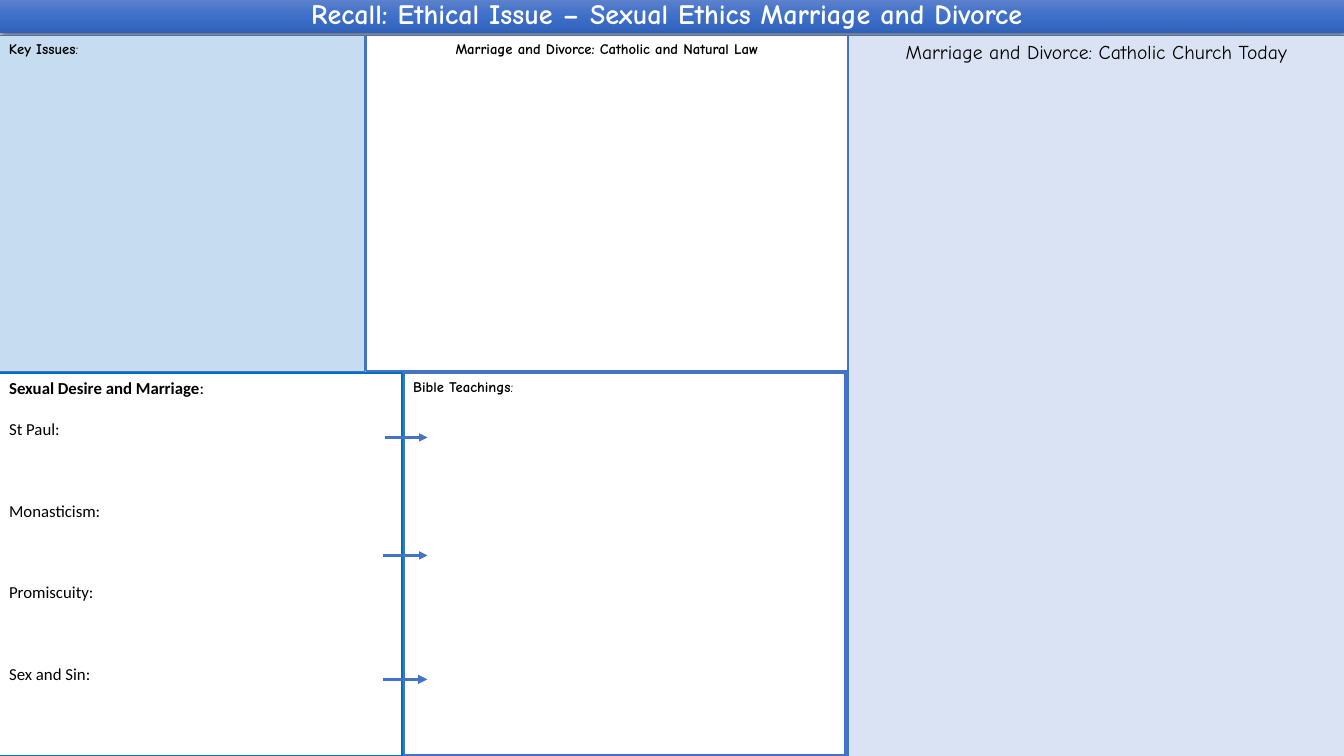
from lxml import etree
from pptx import Presentation
from pptx.dml.color import RGBColor
from pptx.enum.shapes import MSO_CONNECTOR, MSO_SHAPE
from pptx.enum.text import MSO_ANCHOR, MSO_AUTO_SIZE, PP_ALIGN
from pptx.oxml import parse_xml
from pptx.oxml.ns import qn
from pptx.util import Inches, Pt

RECTANGLE = MSO_SHAPE.RECTANGLE
STRAIGHT = MSO_CONNECTOR.STRAIGHT
TOP, MIDDLE = MSO_ANCHOR.TOP, MSO_ANCHOR.MIDDLE
NO_AUTOFIT = MSO_AUTO_SIZE.NONE
LEFT, CENTER = PP_ALIGN.LEFT, PP_ALIGN.CENTER

WHITE = RGBColor(0xFF, 0xFF, 0xFF)
BLACK = RGBColor(0, 0, 0)
BLUE = RGBColor(0x44, 0x72, 0xC4)
DEEP_BLUE = RGBColor(0x00, 0x70, 0xC0)
SKY = RGBColor(0xC6, 0xDC, 0xF0)
LAVENDER = RGBColor(0xDA, 0xE3, 0xF3)
BANNER_STOPS = (
    (0, RGBColor(0x61, 0x83, 0xCB)),
    (50, RGBColor(0x3E, 0x70, 0xCA)),
    (100, RGBColor(0x30, 0x62, 0xBB)),
)
NAMESPACE = 'xmlns:a="http://schemas.openxmlformats.org/drawingml/2006/main"'
COMIC, CALIBRI = "Comic Neue", "Calibri"
TOPICS = ("St Paul:", "Monasticism:", "Promiscuity:", "Sex and Sin:")
ARROWS = ((3.82, 4.34, 2), (3.8, 5.51, 2), (3.8, 6.74, 2.25))


def place(shape, left, top, width, height):
    """Set the position and size of a shape in inches."""
    shape.left, shape.top = Inches(left), Inches(top)
    shape.width, shape.height = Inches(width), Inches(height)


def prepare_frame(shape, anchor=TOP):
    """Make the text of a shape wrap without resizing and return its frame."""
    frame = shape.text_frame
    frame.auto_size = NO_AUTOFIT
    frame.word_wrap = True
    frame.vertical_anchor = anchor
    return frame


def write(paragraph, text, size=10.5, font=COMIC, color=BLACK, bold=False,
          align=LEFT, before=0, spacing=1.0):
    """Add a formatted run to a paragraph."""
    paragraph.alignment = align
    paragraph.space_before = Pt(before)
    paragraph.space_after = Pt(0)
    paragraph.line_spacing = spacing
    run = paragraph.add_run()
    run.text = text
    run.font.name = font
    run.font.size = Pt(size)
    run.font.bold = bold
    run.font.color.rgb = color


def remove_bullet(paragraph):
    """Clear the bullet and hanging indent of a paragraph."""
    properties = paragraph._p.get_or_add_pPr()
    properties.set("marL", "0")
    properties.set("indent", "0")
    etree.SubElement(properties, qn("a:buNone"))


def set_line(shape, color, width):
    """Give a shape or connector a solid line."""
    shape.line.color.rgb = color
    shape.line.width = Pt(width)


def add_panel(slide, box, fill, line_width, heading, **text_format):
    """Add a bordered panel with a heading and return its first paragraph."""
    shape = slide.shapes.add_shape(RECTANGLE, *map(Inches, box))
    shape.shadow.inherit = False
    shape.fill.solid()
    shape.fill.fore_color.rgb = fill
    set_line(shape, BLUE, line_width)
    paragraph = prepare_frame(shape).paragraphs[0]
    write(paragraph, heading, **text_format)
    return paragraph


def fill_banner(title):
    """Turn the title placeholder into the shaded banner."""
    place(title, 0, -0.02, 13.33, 0.35)
    stops = "".join(
        f'<a:gs pos="{position * 1000}"><a:srgbClr val="{color}"/></a:gs>'
        for position, color in BANNER_STOPS
    )
    properties = title._element.spPr
    properties.append(parse_xml(
        f'<a:gradFill {NAMESPACE} rotWithShape="1"><a:gsLst>{stops}</a:gsLst>'
        '<a:lin ang="5400000" scaled="0"/></a:gradFill>'
    ))
    properties.append(parse_xml(
        f'<a:effectLst {NAMESPACE}><a:outerShdw blurRad="{Pt(4.5)}" dist="{Pt(1.5)}" '
        'dir="5400000" algn="ctr" rotWithShape="0"><a:srgbClr val="000000">'
        '<a:alpha val="63000"/></a:srgbClr></a:outerShdw></a:effectLst>'
    ))
    paragraph = prepare_frame(title, MIDDLE).paragraphs[0]
    write(paragraph, "Recall: Ethical Issue – Sexual Ethics Marriage and Divorce ",
          size=20, color=WHITE, bold=True, align=CENTER, spacing=0.9)


def fill_topics(body):
    """Turn the body placeholder into the list of topics."""
    place(body, -0.01, 3.7, 4, 3.8)
    set_line(body, DEEP_BLUE, 1.5)
    frame = prepare_frame(body)
    heading = frame.paragraphs[0]
    write(heading, "Sexual Desire and Marriage", size=12, font=CALIBRI, bold=True)
    write(heading, ":", size=12, font=CALIBRI)
    remove_bullet(heading)
    for index, topic in enumerate(TOPICS):
        paragraph = frame.add_paragraph()
        write(paragraph, topic, size=12, font=CALIBRI, before=44 if index else 14.6)
        remove_bullet(paragraph)


def add_arrow(slide, start, end, level, width):
    """Add a horizontal arrow that points right."""
    arrow = slide.shapes.add_connector(
        STRAIGHT, Inches(start), Inches(level), Inches(end), Inches(level))
    set_line(arrow, BLUE, width)
    etree.SubElement(arrow.line._get_or_add_ln(), qn("a:tailEnd"), type="triangle")
    etree.SubElement(arrow._element.spPr, qn("a:effectLst"))


def main():
    """Build the revision slide and save it."""
    presentation = Presentation()
    presentation.slide_width = Inches(13.33)
    presentation.slide_height = Inches(7.5)
    slide = presentation.slides.add_slide(presentation.slide_layouts[1])
    fill_banner(slide.shapes.title)

    key_issues = add_panel(slide, (-0.01, 0.35, 3.62, 3.33), SKY, 0.5,
                           "Key Issues", bold=True)
    write(key_issues, ":")
    add_panel(slide, (3.63, 0.35, 4.78, 3.33), WHITE, 1,
              "Marriage and Divorce: Catholic and Natural Law", bold=True, align=CENTER)
    bible = add_panel(slide, (4, 3.7, 4.39, 3.8), WHITE, 2.25,
                      "Bible Teachings", bold=True)
    write(bible, ":")
    add_panel(slide, (8.41, 0.35, 4.93, 7.31), LAVENDER, 1,
              "Marriage and Divorce: Catholic Church Today", size=14, align=CENTER)

    body = slide.placeholders[1]
    fill_topics(body)
    slide.shapes._spTree.append(body._element)
    for start, level, width in ARROWS:
        add_arrow(slide, start, 4.24, level, width)
    presentation.save("out.pptx")


if __name__ == "__main__":
    main()
